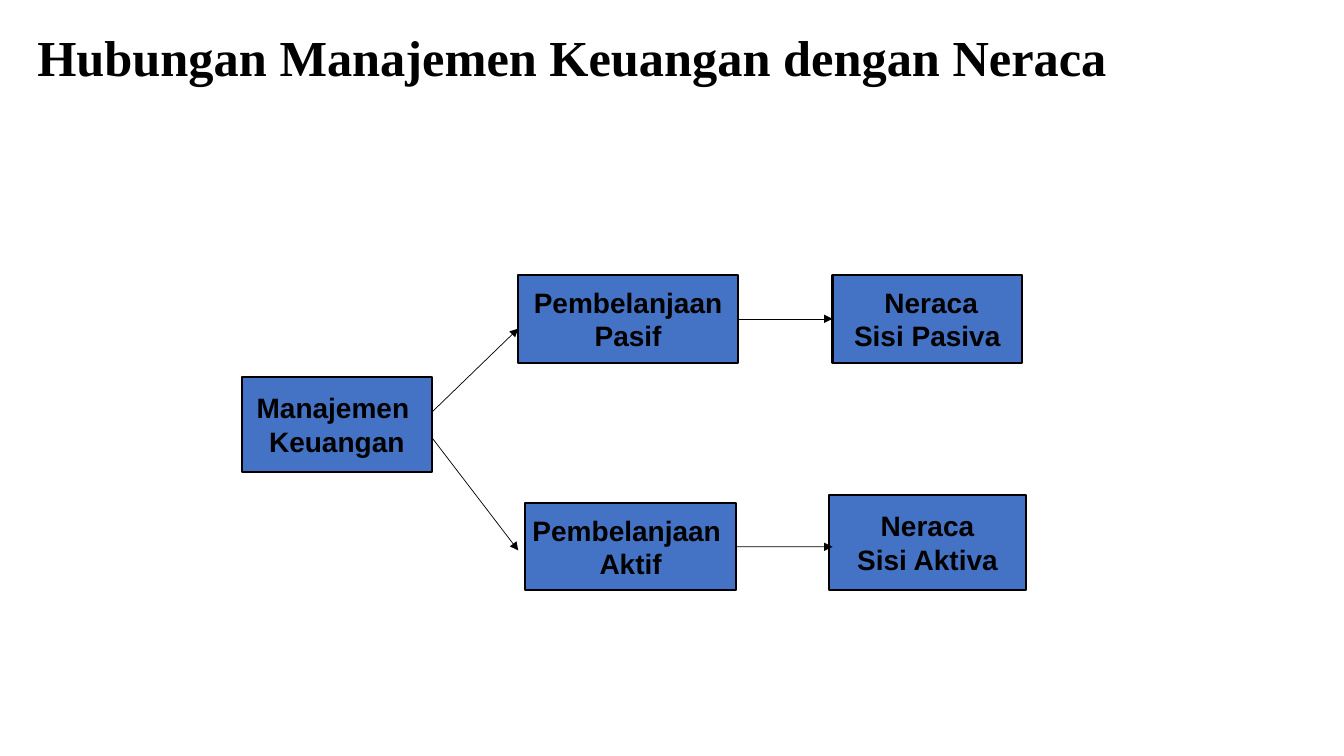
import pptx
import pptx.dml.color
import pptx.enum.shapes
import pptx.enum.text
import pptx.oxml.ns
import pptx.util
from lxml import etree

Cm = pptx.util.Cm
Pt = pptx.util.Pt
COLORS = {"box": "4472C4", "ink": "000000"}
TITLE_FONT = {"name": "Times New Roman", "size": Pt(36), "bold": True}
BOX_FONT = {"name": "Arial", "size": Pt(20), "bold": True}
BOXES = {
    "manajemen": (["Manajemen ", "Keuangan"], (0, 2.57, 4.78, 2.39)),
    "pasiva": ([" Neraca", "Sisi Pasiva"], (14.88, 0, 4.78, 2.21)),
    "pasif": (["Pembelanjaan", "Pasif"], (6.96, 0, 5.54, 2.21)),
    "aktiva": (["Neraca", "Sisi Aktiva"], (14.8, 5.54, 4.95, 2.39)),
    "aktif": (["Pembelanjaan ", "Aktif"], (7.13, 5.74, 5.33, 2.21)),
}
ARROWS = [
    ((4.78, 3.46), (6.96, 1.35), None, None),
    ((4.78, 4.09), (6.96, 6.94), None, None),
    ((12.5, 1.1), (14.88, 1.1), "pasif", "pasiva"),
    ((12.46, 6.85), (14.88, 6.85), "aktif", None),
]
RIGHT_SIDE, LEFT_SIDE = 3, 1


def color(name):
    """Return the named colour."""
    return pptx.dml.color.RGBColor.from_string(COLORS[name])


def write_lines(text_frame, lines, font_format, paragraph_format):
    """Write one paragraph per line, centred vertically in the frame."""
    text_frame.vertical_anchor = pptx.enum.text.MSO_ANCHOR.MIDDLE
    for index, line in enumerate(lines):
        paragraph = text_frame.add_paragraph() if index else text_frame.paragraphs[0]
        for name, value in paragraph_format.items():
            setattr(paragraph, name, value)
        run = paragraph.add_run()
        run.text = line
        for name, value in font_format.items():
            setattr(run.font, name, value)
        run.font.color.rgb = color("ink")


def add_title(slide, left, top, width, height):
    """Place the slide title in the given box."""
    shape = slide.shapes.add_textbox(Cm(left), Cm(top), Cm(width), Cm(height))
    shape.text_frame.word_wrap = True
    write_lines(shape.text_frame, ["Hubungan Manajemen Keuangan dengan Neraca"],
                TITLE_FONT, {"line_spacing": 0.9})


def add_box(slide, lines, left, top, width, height):
    """Draw one outlined box with centred lines and return it."""
    shape = slide.shapes.add_shape(pptx.enum.shapes.MSO_SHAPE.RECTANGLE,
                                   Cm(left), Cm(top), Cm(width), Cm(height))
    shape.shadow.inherit = False
    shape.fill.solid()
    shape.fill.fore_color.rgb = color("box")
    shape.line.color.rgb = color("ink")
    shape.line.width = Pt(1.5)
    shape.text_frame.word_wrap = False
    write_lines(shape.text_frame, lines, BOX_FONT,
                {"alignment": pptx.enum.text.PP_ALIGN.CENTER})
    return shape


def add_arrow(slide, start, end):
    """Draw a thin straight arrow and return it."""
    connector = slide.shapes.add_connector(
        pptx.enum.shapes.MSO_CONNECTOR.STRAIGHT, *map(Cm, start + end))
    connector.line.color.rgb = color("ink")
    connector.line.width = Pt(0.5)
    qualified = pptx.oxml.ns.qn
    etree.SubElement(connector.line._get_or_add_ln(), qualified("a:tailEnd"), type="triangle")
    etree.SubElement(connector._element.spPr, qualified("a:effectLst"))
    return connector


def add_diagram(slide, left, top):
    """Place the boxes and arrows relative to the diagram's corner."""
    shapes = {}
    for name, (lines, (x, y, width, height)) in BOXES.items():
        shapes[name] = add_box(slide, lines, left + x, top + y, width, height)
    for (start_x, start_y), (end_x, end_y), source, target in ARROWS:
        connector = add_arrow(slide, (left + start_x, top + start_y),
                              (left + end_x, top + end_y))
        if source:
            connector.begin_connect(shapes[source], RIGHT_SIDE)
        if target:
            connector.end_connect(shapes[target], LEFT_SIDE)


def main():
    """Build and save the presentation."""
    presentation = pptx.Presentation()
    presentation.slide_width = Cm(33.87)
    presentation.slide_height = Cm(19.05)
    slide = presentation.slides.add_slide(presentation.slide_layouts[6])
    add_title(slide, 0.69, 0.71, 32.39, 1.63)
    add_diagram(slide, 6.1, 6.93)
    presentation.save("out.pptx")


if __name__ == "__main__":
    main()
